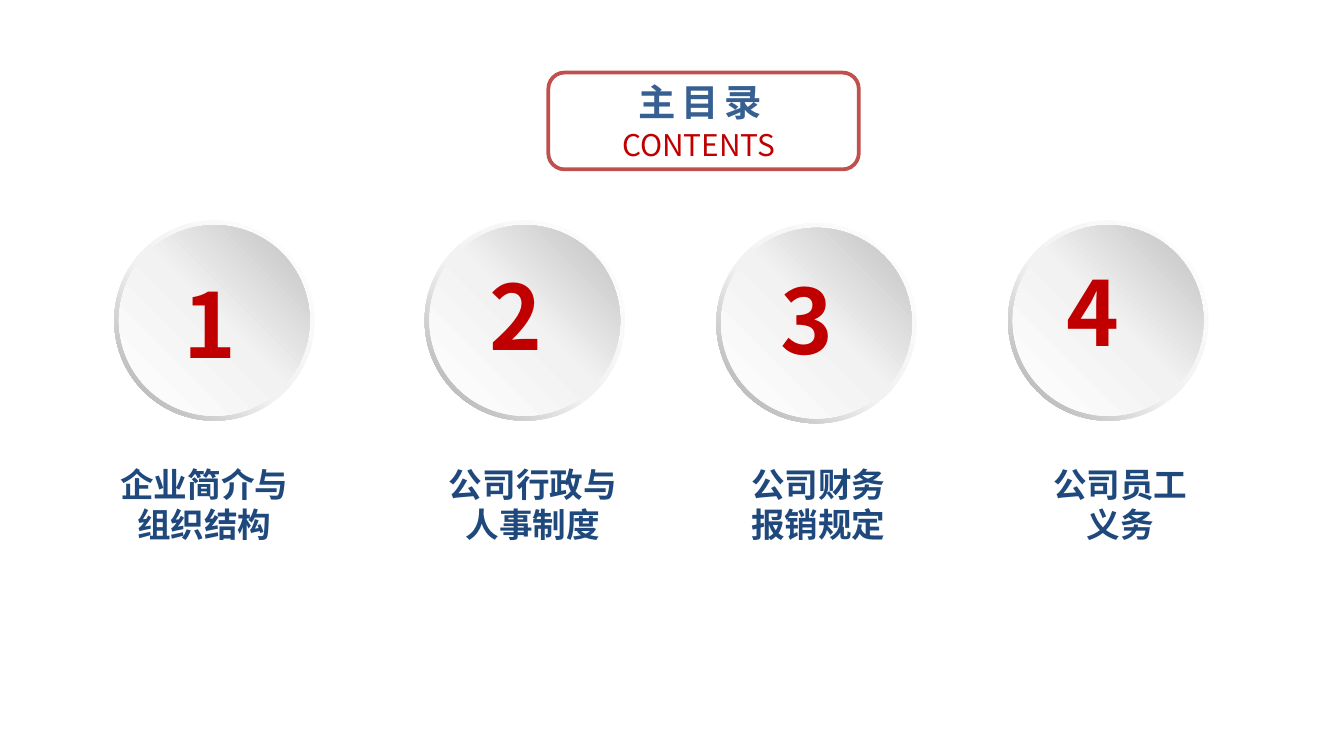
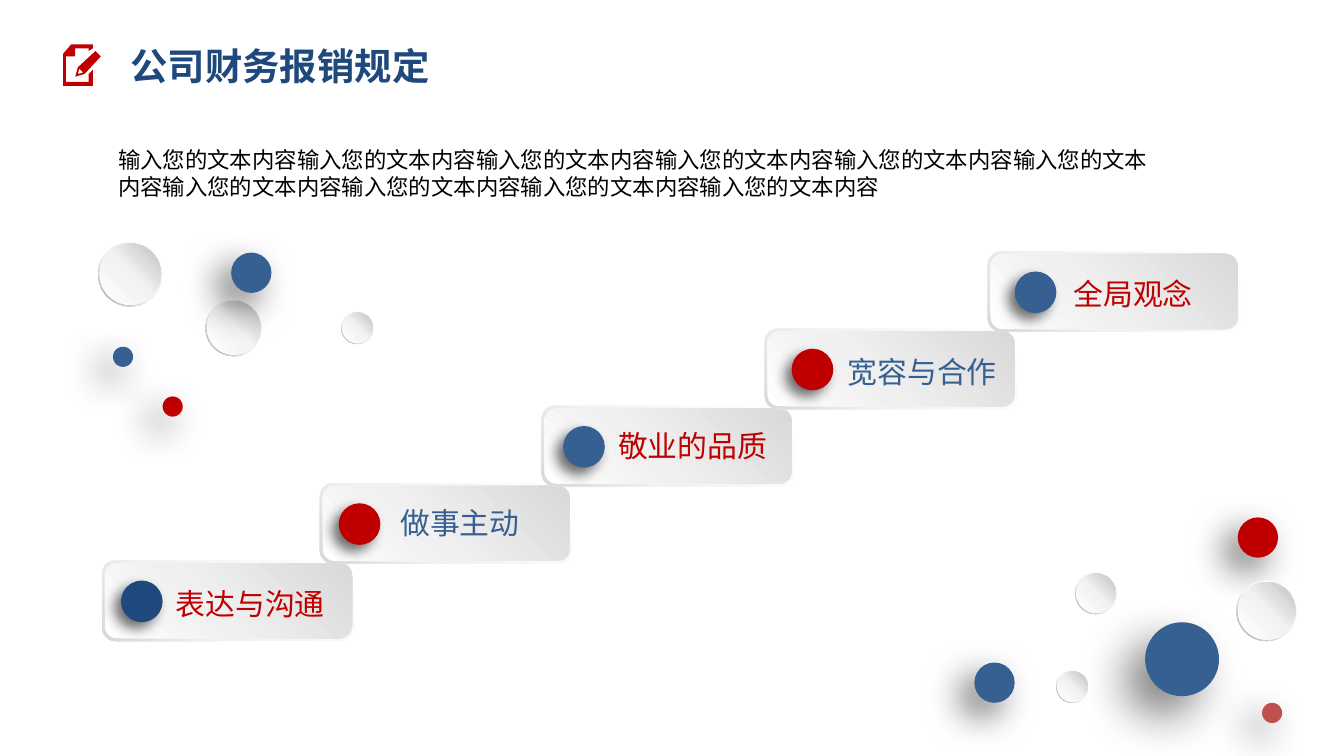
from dataclasses import dataclass
from typing import Optional

from lxml import etree
from pptx import Presentation
from pptx.dml.color import RGBColor
from pptx.enum.shapes import MSO_SHAPE
from pptx.enum.text import MSO_ANCHOR, MSO_AUTO_SIZE, PP_ALIGN
from pptx.oxml.ns import qn
from pptx.util import Inches, Pt

OVAL = MSO_SHAPE.OVAL
DONUT = MSO_SHAPE.DONUT
ROUNDED = MSO_SHAPE.ROUNDED_RECTANGLE
LEFT = PP_ALIGN.LEFT
CENTER = PP_ALIGN.CENTER
TOP = MSO_ANCHOR.TOP
FIT_SHAPE = MSO_AUTO_SIZE.SHAPE_TO_FIT_TEXT
TITLE_ONLY = 5
SLIDE_WIDTH = Inches(10)
SLIDE_HEIGHT = SLIDE_WIDTH * 9 // 16


@dataclass(frozen=True)
class Gradient:
    angle: int
    stops: tuple


@dataclass(frozen=True)
class Shadow:
    opacity: int
    blur: int
    distance: int


@dataclass(frozen=True)
class Theme:
    font: str = "Noto Sans CJK SC"
    navy: str = "1F497D"
    blue: str = "376092"
    red: str = "C00000"
    coral: str = "C0504D"
    black: str = "000000"
    number_size: int = 48
    title_size: int = 20
    chapter_size: int = 18
    label_size: int = 16
    body_size: int = 12
    rim: Gradient = Gradient(225, ((0, "FFFFFF"), (55, "F2F2F2"), (100, "A6A6A6")))
    face: Gradient = Gradient(45, ((0, "FFFFFF"), (51, "F2F2F2"), (100, "BFBFBF")))
    step_rim: Gradient = Gradient(225, ((0, "FFFFFF"), (62, "F2F2F2"), (100, "D9D9D9")))
    step_face: Gradient = Gradient(45, ((0, "FFFFFF"), (42, "F0F0F0"), (100, "D9D9D9")))
    step_shadow: Shadow = Shadow(57, 7, 5)
    bead_shadow: Shadow = Shadow(60, 20, 10)
    large_shadow: Shadow = Shadow(50, 25, 15)


THEME = Theme()


@dataclass(frozen=True)
class Chapter:
    name: str
    disc: tuple
    number: tuple
    name_left: float
    name_width: float
    align: PP_ALIGN = CENTER


@dataclass(frozen=True)
class Step:
    quality: str
    left: float
    dot_offset: float
    dot_color: str
    text_left: float
    text_top: float
    text_width: float
    text_color: str


@dataclass(frozen=True)
class Bead:
    left: float
    top: float
    size: float
    color: Optional[str] = None
    shadow: Shadow = THEME.bead_shadow


CHAPTERS = (
    Chapter("企业简介与组织结构", (0.85, 1.64), (1.27, 1.95), 0.7, 1.64),
    Chapter("公司行政与人事制度", (3.16, 1.64), (3.54, 1.89), 3.19, 1.55),
    Chapter("公司财务报销规定", (5.33, 1.66), (5.71, 1.92), 5.49, 1.3, LEFT),
    Chapter("公司员工义务", (7.5, 1.64), (7.84, 1.86), 7.71, 1.25),
)

STEPS = (
    Step("表达与沟通", 0.76, 0.14, THEME.navy, 1.21, 4.31, 1.31, THEME.red),
    Step("做事主动", 2.38, 0.14, THEME.red, 2.88, 3.71, 1.09, THEME.blue),
    Step("敬业的品质", 4.03, 0.16, THEME.blue, 4.5, 3.13, 1.31, THEME.red),
    Step("宽容与合作", 5.69, 0.2, THEME.red, 6.21, 2.58, 1.31, THEME.blue),
    Step("全局观念", 7.35, 0.2, THEME.blue, 7.89, 2.0, 1.09, THEME.red),
)
FIRST_STEP_TOP = 4.17
LAST_STEP_TOP = 1.87

BEADS = (
    Bead(0.73, 1.8, 0.48),
    Bead(8.52, 4.63, 0.55, THEME.blue, THEME.large_shadow),
    Bead(9.21, 3.85, 0.3, THEME.red),
    Bead(1.53, 2.23, 0.42),
    Bead(7.86, 4.99, 0.24),
    Bead(8.0, 4.26, 0.31),
    Bead(1.72, 1.88, 0.3, THEME.blue),
    Bead(0.84, 2.58, 0.15, THEME.blue),
    Bead(9.2, 4.32, 0.45),
    Bead(7.25, 4.93, 0.3, THEME.blue),
    Bead(1.21, 2.95, 0.15, THEME.red),
    Bead(2.54, 2.32, 0.24),
    Bead(9.39, 5.23, 0.15, THEME.coral),
)

SHEET = (
    (0.66, 0.61), (0.49, 0.61), (0.49, 0.42), (0.56, 0.42), (0.56, 0.36),
    (0.66, 0.36), (0.66, 0.38), (0.69, 0.36), (0.69, 0.33), (0.53, 0.33),
    (0.47, 0.4), (0.47, 0.64), (0.69, 0.64), (0.69, 0.52), (0.66, 0.55),
)
PENCIL = ((0.58, 0.5), (0.56, 0.57), (0.63, 0.55), (0.75, 0.42), (0.71, 0.38))
PENCIL_TIP = ((0.62, 0.54), (0.58, 0.55), (0.59, 0.51))


def place(shape, left: float, top: float, width: float, height: float) -> None:
    shape.left, shape.top = Inches(left), Inches(top)
    shape.width, shape.height = Inches(width), Inches(height)


def write(shape, text: str, *, size: int, color: str, bold: bool = False,
          align: PP_ALIGN = LEFT, wrap: bool = True, spacing: int = 0) -> None:
    frame = shape.text_frame
    frame.word_wrap = wrap
    frame.auto_size = FIT_SHAPE
    frame.vertical_anchor = TOP
    paragraph = frame.paragraphs[0]
    paragraph.alignment = align
    run = paragraph.add_run()
    run.text = text
    run.font.size = Pt(size)
    run.font.bold = bold
    run.font.color.rgb = RGBColor.from_string(color)
    run.font.name = THEME.font
    properties = run.font._element
    etree.SubElement(properties, qn("a:ea"), typeface=THEME.font)
    if spacing:
        properties.set("spc", str(spacing * 100))


def add_text(slide, text: str, left: float, top: float, width: float,
             height: float, **style) -> None:
    box = slide.shapes.add_textbox(
        Inches(left), Inches(top), Inches(width), Inches(height))
    write(box, text, **style)


def paint(shape, fill: str | Gradient, shadow: Optional[Shadow] = None) -> None:
    shape.line.fill.background()
    shape.shadow.inherit = False
    if isinstance(fill, Gradient):
        shape.fill.gradient()
        shape.fill.gradient_angle = fill.angle
        stops = shape._element.spPr.find(qn("a:gradFill")).find(qn("a:gsLst"))
        for old in list(stops):
            stops.remove(old)
        for position, color in fill.stops:
            stop = etree.SubElement(stops, qn("a:gs"), pos=str(position * 1000))
            etree.SubElement(stop, qn("a:srgbClr"), val=color)
    else:
        shape.fill.solid()
        shape.fill.fore_color.rgb = RGBColor.from_string(fill)
    if shadow:
        effects = shape._element.spPr.find(qn("a:effectLst"))
        outer = etree.SubElement(
            effects, qn("a:outerShdw"), blurRad=str(Pt(shadow.blur)),
            dist=str(Pt(shadow.distance)), dir=str(135 * 60000), rotWithShape="0")
        tint = etree.SubElement(outer, qn("a:srgbClr"), val=THEME.black)
        etree.SubElement(tint, qn("a:alpha"), val=str(shadow.opacity * 1000))


def add_figure(slide, kind: MSO_SHAPE, left: float, top: float, width: float,
               height: float, fill: str | Gradient,
               shadow: Optional[Shadow] = None):
    figure = slide.shapes.add_shape(
        kind, Inches(left), Inches(top), Inches(width), Inches(height))
    paint(figure, fill, shadow)
    return figure


def add_disc(slide, left: float, top: float, size: float) -> None:
    rim = add_figure(slide, DONUT, left, top, size, size, THEME.rim)
    rim.adjustments[0] = 0.05
    inset = size / 42
    face = size - 2 * inset
    add_figure(slide, OVAL, left + inset, top + inset, face, face, THEME.face)


def add_outline(slide, *contours: tuple) -> None:
    builder = None
    for contour in contours:
        points = [(Inches(x), Inches(y)) for x, y in contour]
        if builder is None:
            builder = slide.shapes.build_freeform(*points[0])
        else:
            builder.move_to(*points[0])
        builder.add_line_segments(points[1:], close=True)
    paint(builder.convert_to_shape(), THEME.red)


def add_step(slide, step: Step, top: float) -> None:
    add_figure(slide, ROUNDED, step.left, top, 1.88, 0.6, THEME.step_rim)
    add_figure(slide, ROUNDED, step.left + 0.02, top + 0.02, 1.84, 0.56,
               THEME.step_face)
    add_figure(slide, OVAL, step.left + step.dot_offset, top + 0.15, 0.31, 0.31,
               step.dot_color, THEME.step_shadow)
    add_text(slide, step.quality, step.text_left, step.text_top, step.text_width,
             0.37, size=THEME.label_size, color=step.text_color, wrap=False)


def add_titled_slide(deck, title: str, left: float, top: float, width: float,
                     **style):
    slide = deck.slides.add_slide(deck.slide_layouts[TITLE_ONLY])
    place(slide.shapes.title, left, top, width, 0.44)
    write(slide.shapes.title, title, size=THEME.title_size, bold=True, **style)
    return slide


def build_contents(deck) -> None:
    slide = add_titled_slide(deck, "主目录", 4.65, 0.54, 1.16,
                             color=THEME.blue, wrap=False, spacing=3)
    add_text(slide, "CONTENTS", 4.53, 0.89, 1.39, 0.37,
             size=THEME.label_size, color=THEME.red, wrap=False)
    for number, chapter in enumerate(CHAPTERS, start=1):
        add_disc(slide, *chapter.disc, 1.49)
        add_text(slide, str(number), *chapter.number, 0.61, 0.91,
                 size=THEME.number_size, color=THEME.red, bold=True, wrap=False)
        add_text(slide, chapter.name, chapter.name_left, 3.4, chapter.name_width,
                 0.71, size=THEME.chapter_size, color=THEME.navy, bold=True,
                 align=chapter.align)
    border = add_figure(slide, ROUNDED, 4.08, 0.54, 2.31, 0.72, THEME.coral)
    border.fill.background()
    border.line.color.rgb = RGBColor.from_string(THEME.coral)
    border.line.width = Pt(2)


def build_finance_rules(deck) -> None:
    slide = add_titled_slide(deck, "公司财务报销规定", 0.87, 0.27, 3.0,
                             color=THEME.navy)
    add_text(slide, "输入您的文本内容" * 10, 0.78, 1.04, 8.02, 0.5,
             size=THEME.body_size, color=THEME.black)
    rise = (FIRST_STEP_TOP - LAST_STEP_TOP) / (len(STEPS) - 1)
    for index, step in enumerate(STEPS):
        add_step(slide, step, FIRST_STEP_TOP - index * rise)
    for bead in BEADS:
        if bead.color is None:
            add_disc(slide, bead.left, bead.top, bead.size)
        else:
            add_figure(slide, OVAL, bead.left, bead.top, bead.size, bead.size,
                       bead.color, bead.shadow)
    add_outline(slide, SHEET)
    add_outline(slide, PENCIL, PENCIL_TIP)


def main() -> None:
    deck = Presentation()
    deck.slide_width, deck.slide_height = SLIDE_WIDTH, SLIDE_HEIGHT
    build_contents(deck)
    build_finance_rules(deck)
    deck.save("out.pptx")


if __name__ == "__main__":
    main()
